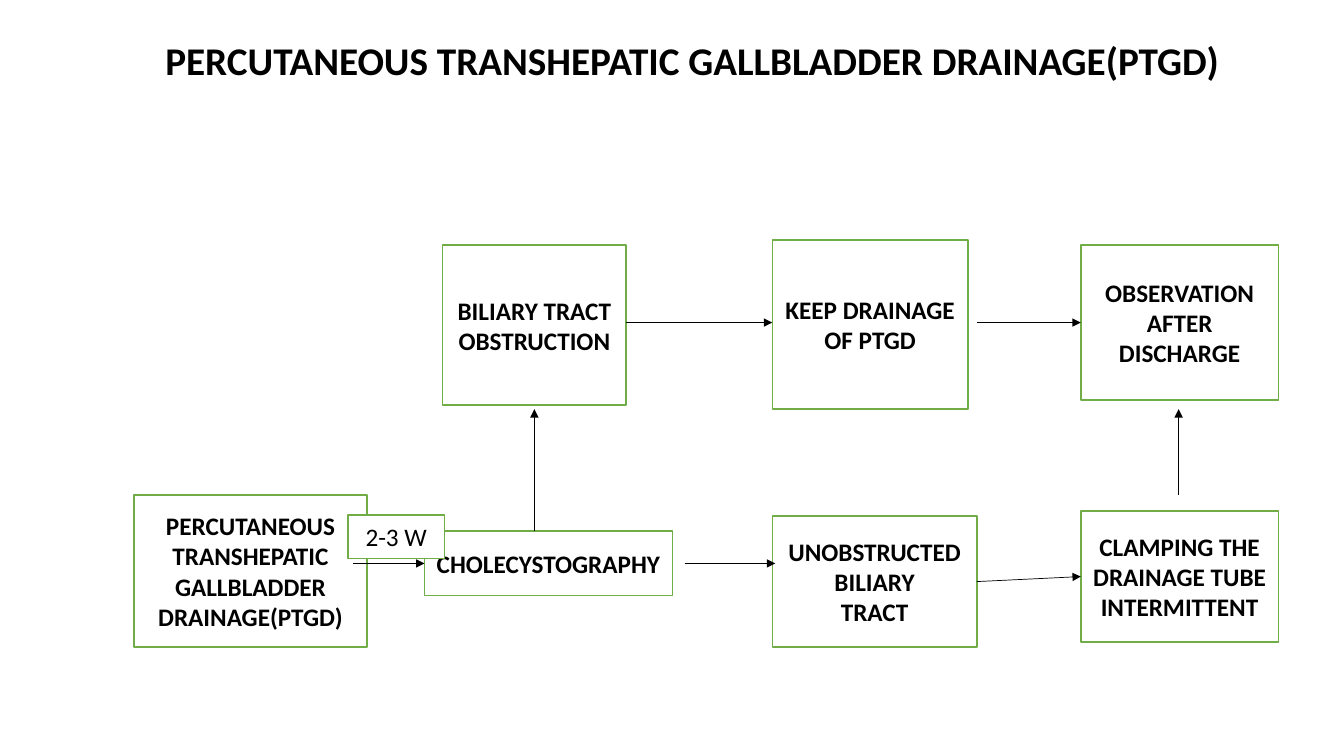
"""Build the gallbladder drainage flowchart slide."""
from lxml.etree import SubElement
from pptx import Presentation
from pptx.dml.color import RGBColor
from pptx.enum.shapes import MSO_CONNECTOR as Connector, MSO_SHAPE as Shape
from pptx.enum.text import MSO_ANCHOR as Anchor, MSO_AUTO_SIZE as AutoSize, PP_ALIGN as Align
from pptx.oxml.ns import qn
from pptx.util import Inches, Pt

CELL = Inches(0.1)
BLACK, WHITE, GREEN = "000000", "FFFFFF", "70AD47"


def color(hex_value):
    return RGBColor.from_string(hex_value)


def write(shape, text, size, bold, align):
    shape.text_frame.text = text
    for paragraph in shape.text_frame.paragraphs:
        paragraph.alignment = align
        for run in paragraph.runs:
            run.font.name = "Calibri"
            run.font.size = Pt(size)
            run.font.bold = bold
            run.font.color.rgb = color(BLACK)


presentation = Presentation()
presentation.slide_width = Inches(13.33)
presentation.slide_height = Inches(7.5)
slide = presentation.slides.add_slide(presentation.slide_layouts[5])

title = slide.shapes.title
title.left, title.top, title.width, title.height = (
    int(cells * CELL) for cells in (6.6, 3.6, 123.7, 68.1))
write(title, "PERCUTANEOUS TRANSHEPATIC GALLBLADDER DRAINAGE(PTGD)", 28, True, Align.LEFT)
title.text_frame.auto_size = AutoSize.NONE
title.text_frame.vertical_anchor = Anchor.TOP
title.text_frame.margin_left = int(9.8 * CELL)
title.text_frame.paragraphs[0].line_spacing = 0.9
title.text_frame.paragraphs[0].space_before = Pt(10)

obstruction_left, middle_left, right_left = 43.9, 76.6, 107.2
upper_top, upper_axis, lower_axis = 24.3, 32, 55.9
test_left, test_top, lower_top = 42.1, 52.7, 49.1
right_width = 19.6
arrow_end = 40.6

steps = [
    ("PERCUTANEOUS TRANSHEPATIC GALLBLADDER DRAINAGE(PTGD)", 13.3, lower_top, 23.1, 15.1),
    ("CHOLECYSTOGRAPHY", test_left, test_top, 24.6, 6.4),
    ("UNOBSTRUCTED\nBILIARY\nTRACT", middle_left, 51.2, 20.3, 13),
    ("CLAMPING THE DRAINAGE TUBE INTERMITTENT", right_left, 50.7, right_width, 13),
    ("OBSERVATION AFTER DISCHARGE", right_left, upper_top, right_width, 15.4),
    ("KEEP DRAINAGE OF PTGD", middle_left, 23.8, 19.4, 16.8),
    ("BILIARY TRACT OBSTRUCTION", obstruction_left, upper_top, 18.2, 15.9),
]
interval = ("2-3 W", 34.5, 51.1, 9.6, 4.3)

arrows = [
    (35, lower_axis, test_left, lower_axis),
    (67.9, lower_axis, 76.9, lower_axis),
    (96.9, 57.7, right_left, 57.2),
    (116.9, lower_top, 116.9, arrow_end),
    (96.9, upper_axis, right_left, upper_axis),
    (62.1, upper_axis, middle_left, upper_axis),
    (53, test_top, 53, arrow_end),
]
for ends in arrows:
    arrow = slide.shapes.add_connector(Connector.STRAIGHT, *(int(end * CELL) for end in ends))
    arrow.line.color.rgb = color(BLACK)
    arrow.line.width = Pt(0.5)
    SubElement(arrow.line._get_or_add_ln(), qn("a:tailEnd"), type="triangle")
    SubElement(arrow._element.spPr, qn("a:effectLst"))

first_arrow = slide.shapes[1]._element
for step in steps + [interval]:
    text, *place = step
    box = slide.shapes.add_shape(Shape.RECTANGLE, *(int(cells * CELL) for cells in place))
    box.shadow.inherit = False
    box.fill.solid()
    box.fill.fore_color.rgb = color(WHITE)
    box.line.color.rgb = color(GREEN)
    box.line.width = Pt(1)
    box.text_frame.vertical_anchor = Anchor.MIDDLE
    write(box, text, 18, step is not interval, Align.CENTER)
    if step is not interval:
        first_arrow.addprevious(box._element)

presentation.save("out.pptx")
